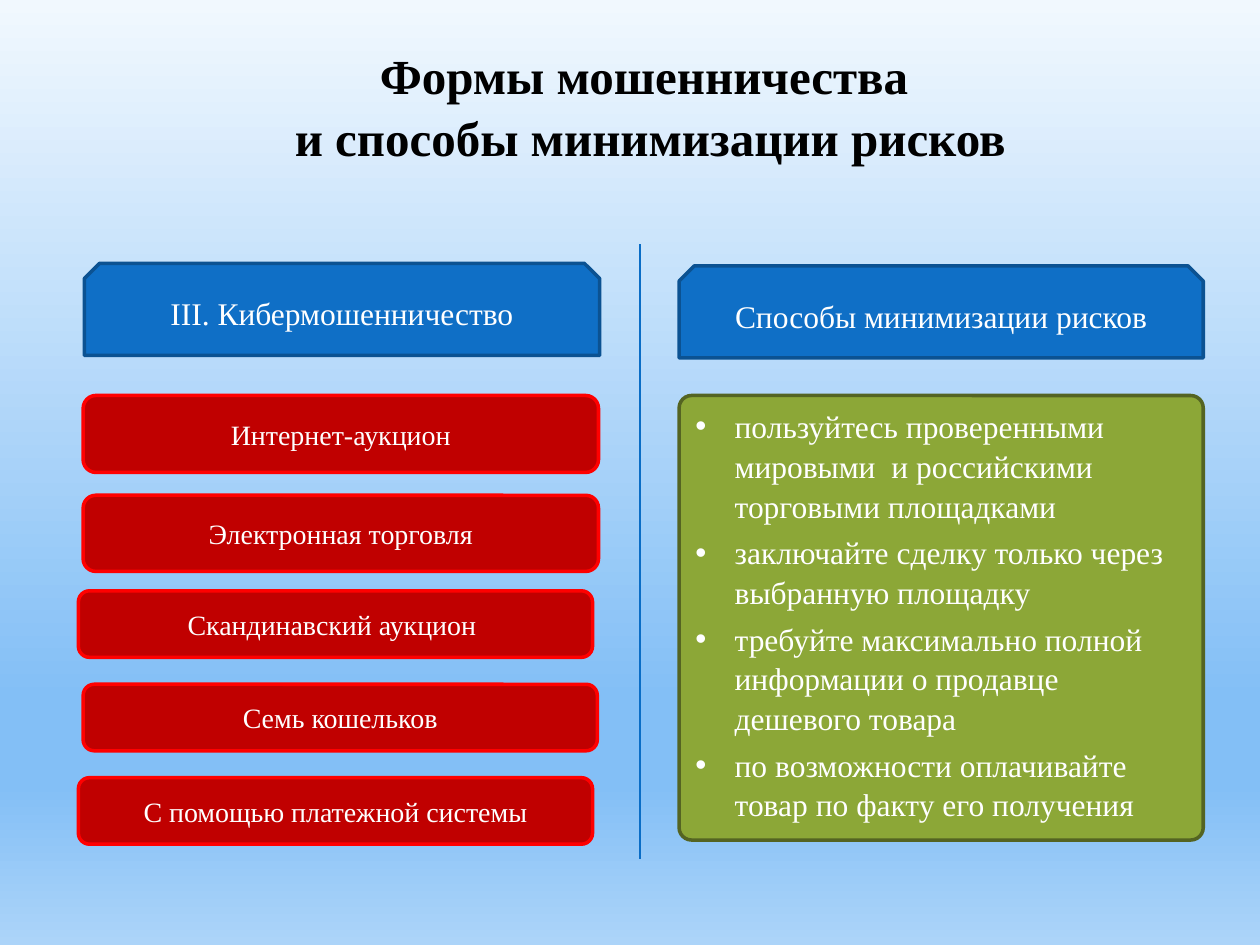
import copy
from dataclasses import dataclass

import pptx
import pptx.dml.color
import pptx.enum.shapes
import pptx.enum.text
import pptx.oxml
import pptx.oxml.ns
import pptx.util

Pt = pptx.util.Pt
SHAPES = pptx.enum.shapes.MSO_SHAPE
ALIGN = pptx.enum.text.PP_ALIGN
ANCHOR = pptx.enum.text.MSO_ANCHOR

FONT = "Times New Roman"
COLORS = {
    "title": "000000",
    "text": "FFFFFF",
    "form": "C00000",
    "form_line": "FF0000",
    "heading": "0F6FC6",
    "heading_line": "0B5292",
    "advice": "8CA737",
    "advice_line": "546422",
    "divider": "0A6DC6",
}
BACKGROUND = [(0, "F1F8FE"), (0.74, "83BFF6"), (0.83, "83BFF6"), (1, "ACD4F9")]
TITLE_LINES = ["Формы мошенничества ", "и способы минимизации рисков"]
ADVICE = [
    "пользуйтесь проверенными мировыми  и российскими торговыми площадками",
    "заключайте сделку только через выбранную площадку",
    "требуйте максимально полной информации о продавце дешевого товара",
    "по возможности оплачивайте товар по факту его получения",
]


@dataclass
class Box:
    text: str
    left: float
    top: float
    width: float
    height: float
    style: str
    size: float = 16
    preset: SHAPES = SHAPES.ROUNDED_RECTANGLE


BOXES = [
    Box("III. Кибермошенничество", 48.2, 150.5, 294.5, 52.6, "heading", 18, SHAPES.SNIP_2_SAME_RECTANGLE),
    Box("Способы минимизации рисков", 388.1, 151.9, 299.5, 52.6, "heading", 18, SHAPES.SNIP_2_SAME_RECTANGLE),
    Box("Интернет-аукцион", 47.5, 226, 294.5, 44, "form"),
    Box("Электронная торговля", 47.5, 283, 294.5, 43.5, "form"),
    Box("Скандинавский аукцион ", 44.8, 337.6, 293.8, 38, "form"),
    Box("Семь кошельков", 47.5, 391, 293.8, 38, "form"),
    Box("С помощью платежной системы", 44.8, 444.4, 293.8, 38, "form"),
]
ADVICE_PANEL = Box("", 388.1, 226, 299.5, 254, "advice")


def color(name: str) -> pptx.dml.color.RGBColor:
    return pptx.dml.color.RGBColor.from_string(COLORS[name])


def place(shape, left: float, top: float, width: float, height: float) -> None:
    shape.left, shape.top = Pt(left), Pt(top)
    shape.width, shape.height = Pt(width), Pt(height)


def add_run(paragraph, text: str, size: float, color_name: str = "text", bold: bool = False) -> None:
    run = paragraph.add_run()
    run.text = text
    run.font.name = FONT
    run.font.size = Pt(size)
    run.font.bold = bold
    run.font.color.rgb = color(color_name)


def paint_background(slide) -> None:
    fill = slide.background.fill
    fill.gradient()
    fill.gradient_angle = 270
    stop_list = slide.element.xpath(".//a:gsLst")[0]
    while len(stop_list) < len(BACKGROUND):
        stop_list.append(copy.deepcopy(stop_list[0]))
    for stop, (position, value) in zip(fill.gradient_stops, BACKGROUND):
        stop.position = position
        stop.color.rgb = pptx.dml.color.RGBColor.from_string(value)


def add_box(slide, box: Box):
    shape = slide.shapes.add_shape(box.preset, Pt(box.left), Pt(box.top), Pt(box.width), Pt(box.height))
    shape.shadow.inherit = False
    shape.fill.solid()
    shape.fill.fore_color.rgb = color(box.style)
    shape.line.color.rgb = color(box.style + "_line")
    shape.line.width = Pt(2)
    if box.text:
        frame = shape.text_frame
        frame.word_wrap = True
        frame.vertical_anchor = ANCHOR.MIDDLE
        frame.paragraphs[0].alignment = ALIGN.CENTER
        add_run(frame.paragraphs[0], box.text, box.size)
    return shape


def fill_title(title) -> None:
    place(title, 101.5, 22.3, 540, 75)
    frame = title.text_frame
    frame.auto_size = pptx.enum.text.MSO_AUTO_SIZE.NONE
    frame.vertical_anchor = ANCHOR.MIDDLE
    paragraph = frame.paragraphs[0]
    paragraph.alignment = ALIGN.CENTER
    paragraph.line_spacing = 1.05
    for index, line in enumerate(TITLE_LINES):
        if index:
            paragraph.add_line_break()
        add_run(paragraph, line, 28, "title", True)


def fill_advice(body, panel: Box) -> None:
    inset = 2
    place(body, panel.left + inset, panel.top + inset, panel.width - 2 * inset, panel.height - 2 * inset)
    frame = body.text_frame
    frame.auto_size = pptx.enum.text.MSO_AUTO_SIZE.NONE
    frame.vertical_anchor = ANCHOR.TOP
    for index, text in enumerate(ADVICE):
        paragraph = frame.add_paragraph() if index else frame.paragraphs[0]
        paragraph.alignment = ALIGN.LEFT
        paragraph.line_spacing = 1.05
        paragraph.space_before = paragraph.space_after = Pt(2)
        add_run(paragraph, text, 18)
        properties = paragraph._p.get_or_add_pPr()
        properties.set("marL", str(Pt(22.5)))
        properties.set("indent", str(-Pt(22.5)))
        bullet = pptx.oxml.parse_xml(f'<a:buChar {pptx.oxml.ns.nsdecls("a")} char="•"/>')
        properties.append(bullet)


def add_divider(slide) -> None:
    divider = slide.shapes.add_connector(
        pptx.enum.shapes.MSO_CONNECTOR.STRAIGHT, Pt(365.8), Pt(139.7), Pt(365.8), Pt(491)
    )
    divider.line.color.rgb = color("divider")
    divider.line.width = Pt(0.75)
    effects = pptx.oxml.parse_xml(f'<a:effectLst {pptx.oxml.ns.nsdecls("a")}/>')
    divider._element.spPr.append(effects)


def main() -> None:
    presentation = pptx.Presentation()
    presentation.slide_width, presentation.slide_height = Pt(720), Pt(540)
    slide = presentation.slides.add_slide(presentation.slide_layouts[1])
    paint_background(slide)
    fill_title(slide.shapes.title)
    for box in BOXES:
        add_box(slide, box)
    panel = add_box(slide, ADVICE_PANEL)
    panel.adjustments[0] = 0.028
    body = slide.placeholders[1]
    fill_advice(body, ADVICE_PANEL)
    panel._element.addnext(body._element)
    add_divider(slide)
    presentation.save("out.pptx")


if __name__ == "__main__":
    main()
